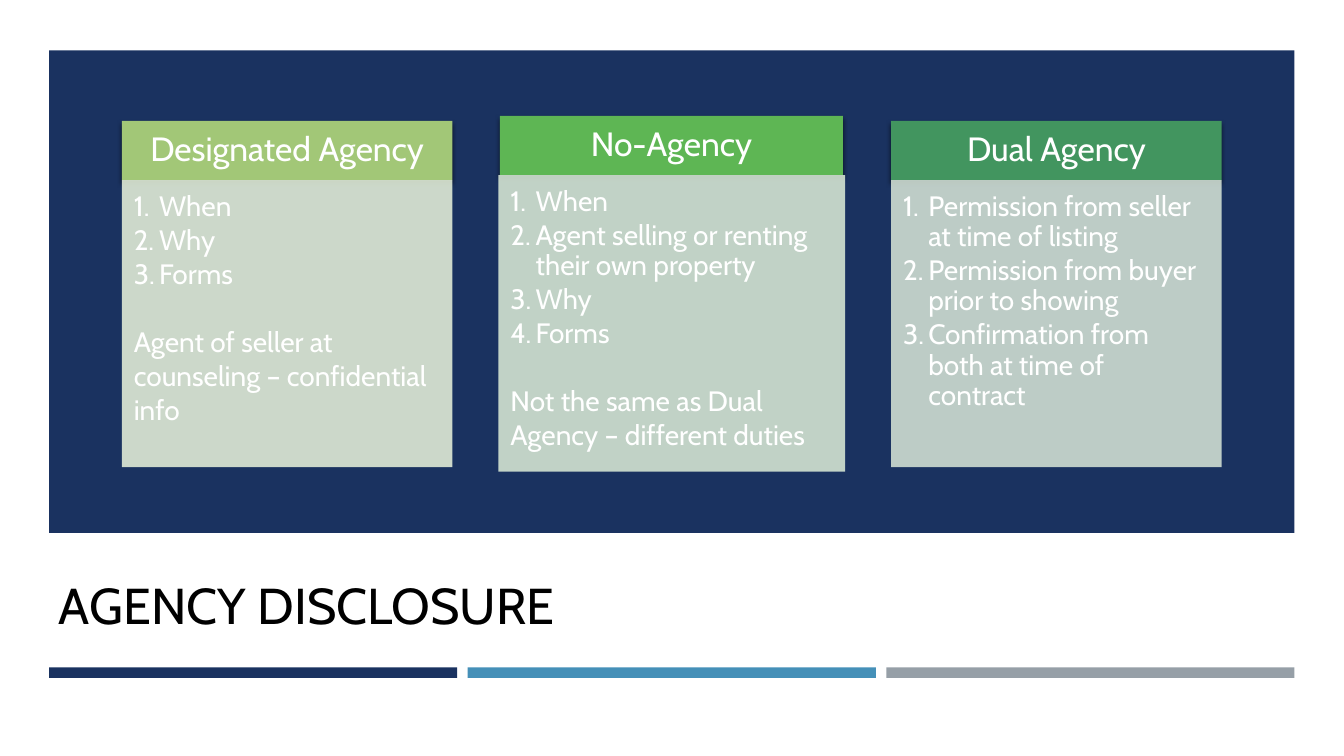
import dataclasses

import pptx
import pptx.dml.color
import pptx.enum.shapes
import pptx.enum.text
import pptx.oxml
import pptx.oxml.ns
import pptx.util

Pt = pptx.util.Pt
ALIGN = pptx.enum.text.PP_ALIGN
ANCHOR = pptx.enum.text.MSO_ANCHOR
NS = pptx.oxml.ns.nsdecls("a")


@dataclasses.dataclass(frozen=True)
class Theme:
    font: str = "Cabin"
    title_size: float = 36
    heading_size: float = 24
    body_size: float = 20
    title: str = "000000"
    light: str = "FFFFFF"
    navy: str = "1A3260"
    blue: str = "4590B8"
    grey: str = "969FA7"


THEME = Theme()

# heading box, body box, heading colour, body colour, heading, numbered points, note lines
AGENCIES = [
    ((87, 86.4, 236.2, 42.3), (87, 128.7, 236.2, 205), "A2C777", "E0EBD6",
     "Designated Agency", ["When", "Why", "Forms"],
     ["Agent of seller at", "counseling – confidential", "info"]),
    ((357.1, 82.8, 245, 42.3), (356, 125.1, 247.6, 211.8), "5EB654", "D4E4D2",
     "No-Agency",
     ["When", "Agent selling or renting their own property", "Why", "Forms"],
     ["Not the same as Dual", "Agency – different duties"]),
    ((636.5, 86.4, 236.2, 42.3), (636.5, 128.7, 236.2, 205), "42955F", "CFDDD2",
     "Dual Agency",
     ["Permission from seller at time of listing",
      "Permission from buyer prior to showing",
      "Confirmation from both at time of contract"], []),
]


def add_block(slide, box, color):
    """Plain filled rectangle without outline or shadow."""
    block = slide.shapes.add_shape(
        pptx.enum.shapes.MSO_SHAPE.RECTANGLE, *map(Pt, box))
    block.shadow.inherit = False
    block.fill.solid()
    block.fill.fore_color.rgb = pptx.dml.color.RGBColor.from_string(color)
    block.line.fill.background()
    return block


def set_frame(frame, insets, anchor):
    frame.word_wrap = True
    frame.vertical_anchor = anchor
    (frame.margin_left, frame.margin_top,
     frame.margin_right, frame.margin_bottom) = map(Pt, insets)


def add_text(paragraph, text, size, color):
    run = paragraph.add_run()
    run.text = text
    run.font.name = THEME.font
    run.font.size = Pt(size)
    run.font.color.rgb = pptx.dml.color.RGBColor.from_string(color)


def add_heading(slide, box, color, text):
    heading = add_block(slide, box, color)
    effects = heading._element.spPr.find(pptx.oxml.ns.qn("a:effectLst"))
    effects.append(pptx.oxml.parse_xml(
        f'<a:outerShdw {NS} blurRad="{Pt(3)}" dist="{Pt(2)}" dir="5400000" '
        'algn="ctr" rotWithShape="0"><a:srgbClr val="000000">'
        '<a:alpha val="55000"/></a:srgbClr></a:outerShdw>'))
    set_frame(heading.text_frame, (13.4, 7.7, 13.4, 7.7), ANCHOR.MIDDLE)
    paragraph = heading.text_frame.paragraphs[0]
    paragraph.alignment = ALIGN.CENTER
    paragraph.line_spacing = 0.9
    add_text(paragraph, text, THEME.heading_size, THEME.light)


def add_details(slide, box, color, points, notes):
    """Translucent panel with numbered points and unnumbered lines below them."""
    panel = add_block(slide, box, color)
    panel.fill._xPr.find(pptx.oxml.ns.qn("a:solidFill"))[0].append(
        pptx.oxml.parse_xml(f'<a:alpha {NS} val="90000"/>'))
    frame = panel.text_frame
    set_frame(frame, (8.6, 8.6, 11.5, 12.2), ANCHOR.TOP)
    for index, text in enumerate(points + notes):
        paragraph = frame.add_paragraph() if index else frame.paragraphs[0]
        properties = paragraph._p.get_or_add_pPr()
        properties.set("marL", str(Pt(18)))
        properties.set("indent", str(Pt(-18)))
        if index < len(points):
            properties.append(pptx.oxml.parse_xml(
                f'<a:buAutoNum {NS} type="arabicPeriod"/>'))
        paragraph.alignment = ALIGN.LEFT
        paragraph.line_spacing = 0.9
        paragraph.space_after = Pt(2.7)
        if index == len(points):
            paragraph.space_before = Pt(24.5)
        add_text(paragraph, text, THEME.body_size, THEME.light)


def add_title(slide, box, text):
    title = slide.shapes.add_textbox(*map(Pt, box))
    set_frame(title.text_frame, (7.2, 3.6, 7.2, 3.6), ANCHOR.MIDDLE)
    add_text(title.text_frame.paragraphs[0], text, THEME.title_size, THEME.title)


def add_stripes(slide, box, colors, gap=7.5):
    """Equal bars side by side across the box."""
    left, top, width, height = box
    bar = (width - gap * (len(colors) - 1)) / len(colors)
    for index, color in enumerate(colors):
        add_block(slide, (left + index * (bar + gap), top, bar, height), color)


def main():
    deck = pptx.Presentation()
    deck.slide_width, deck.slide_height = Pt(960), Pt(540)
    slide = deck.slides.add_slide(deck.slide_layouts[6])
    left, width = 35, 889.6
    add_block(slide, (left, 36, width, 344.6), THEME.navy)
    add_stripes(slide, (left, 476.7, width, 7.5),
                [THEME.navy, THEME.blue, THEME.grey])
    add_title(slide, (left, 394, width, 75), "AGENCY DISCLOSURE")
    for head_box, body_box, head_color, body_color, name, points, notes in AGENCIES:
        add_heading(slide, head_box, head_color, name)
        add_details(slide, body_box, body_color, points, notes)
    deck.save("out.pptx")


if __name__ == "__main__":
    main()
